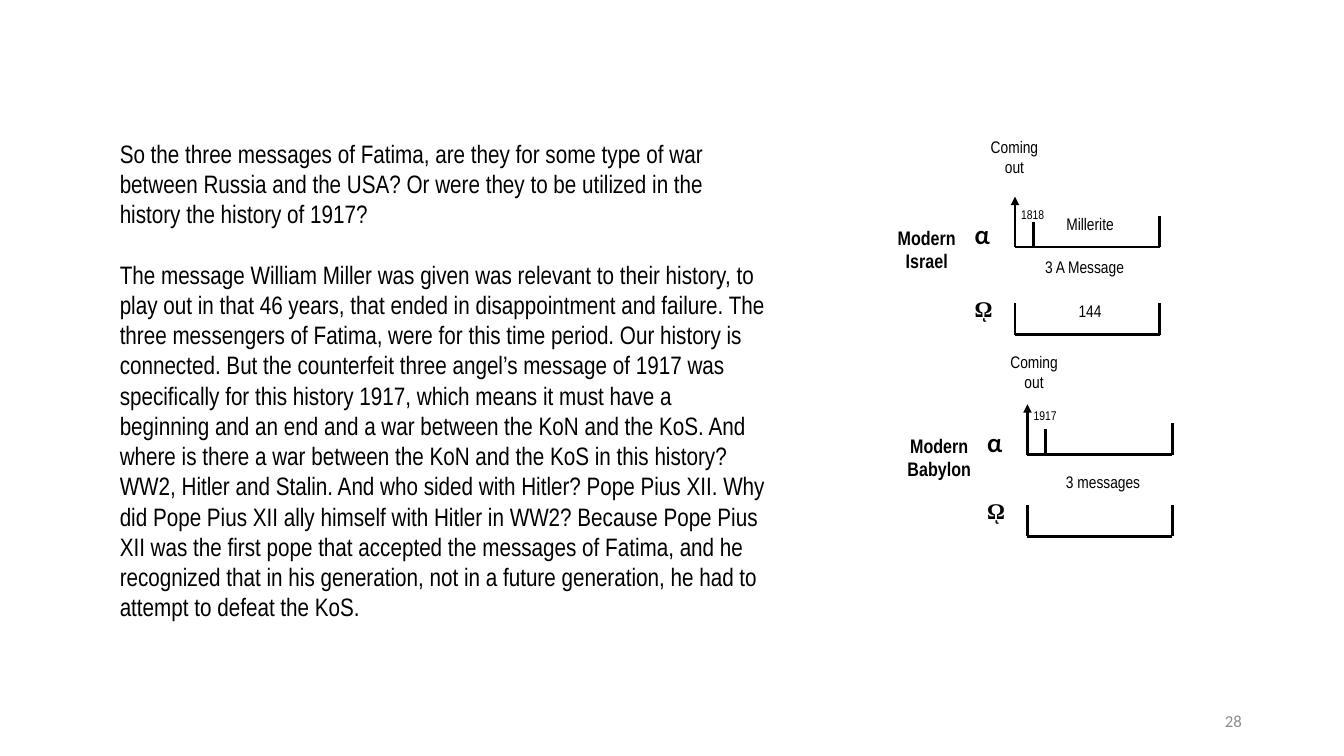
"""Builds a slide with a commentary on the left and two alpha-omega timelines on the right."""
from lxml.etree import SubElement
from pptx import Presentation
from pptx.dml.color import RGBColor
from pptx.enum.shapes import MSO_CONNECTOR
from pptx.enum.text import MSO_ANCHOR, PP_ALIGN
from pptx.oxml.ns import qn
from pptx.util import Pt

BODY = [
    "So the three messages of Fatima, are they for some type of war between Russia and the USA? "
    "Or were they to be utilized in the history the history of 1917?",
    "The message William Miller was given was relevant to their history, to play out in that 46 years, "
    "that ended in disappointment and failure. The three messengers of Fatima, were for this time period. "
    "Our history is connected. But the counterfeit three angel’s message of 1917 was specifically for this "
    "history 1917, which means it must have a beginning and an end and a war between the KoN and the KoS. "
    "And where is there a war between the KoN and the KoS in this history? WW2, Hitler and Stalin. "
    "And who sided with Hitler? Pope Pius XII. Why did Pope Pius XII ally himself with Hitler in WW2? "
    "Because Pope Pius XII was the first pope that accepted the messages of Fatima, and he recognized that "
    "in his generation, not in a future generation, he had to attempt to defeat the KoS.",
]
PAGE = "28"
TIMELINES = [
    {"name": ["Modern", "Israel"], "year": "1818", "message": "3 A Message",
     "spans": ["Millerite", "144"], "x": 725, "alpha": 176.4, "omega": 239,
     "out_at": (-27.4, -81.4), "year_dy": -31.7, "message_at": (0, 4.3)},
    {"name": ["Modern", "Babylon"], "year": "1917", "message": "3 messages",
     "spans": [], "x": 733.9, "alpha": 324.7, "omega": 383,
     "out_at": (-22.3, -76.3), "year_dy": -36, "message_at": (4.3, 9.4)},
]
THEME = {
    "ink": RGBColor(0, 0, 0), "muted": RGBColor(0x8C, 0x8C, 0x8C), "line": 2,
    "main": "Arial Narrow", "number": "Calibri", "alpha": "Lato", "omega": "Times New Roman",
    "body": 18, "name": 14, "label": 12, "year": 9, "alpha_size": 18, "omega_size": 16,
}
SPAN_W, SPAN_H = 103.4, 22.3


def add_text(s, paragraphs, box, size, font=THEME["main"], color=THEME["ink"], bold=False,
             align=PP_ALIGN.CENTER, anchor=MSO_ANCHOR.TOP, inset=(2.9, 2.9), gap=0):
    tf = s.shapes.add_textbox(*map(Pt, box)).text_frame
    tf.word_wrap = True
    tf.vertical_anchor = anchor
    tf.margin_left = tf.margin_right = Pt(inset[0])
    tf.margin_top = tf.margin_bottom = Pt(inset[1])
    tf.text = "\n".join(paragraphs)
    for p in tf.paragraphs:
        p.alignment = align
        p.space_after = Pt(gap)
        for r in p.runs:
            r.font.name, r.font.size, r.font.bold = font, Pt(size), bold
            r.font.color.rgb = color


def add_line(s, x1, y1, x2, y2, arrow=False):
    sp = s.shapes.add_connector(MSO_CONNECTOR.STRAIGHT, Pt(x1), Pt(y1), Pt(x2), Pt(y2))
    sp.line.color.rgb = THEME["ink"]
    sp.line.width = Pt(THEME["line"])
    if arrow:
        SubElement(sp.line._get_or_add_ln(), qn("a:tailEnd"), type="triangle")
    SubElement(sp._element.spPr, qn("a:effectLst"))


def add_span(s, x, y):
    add_line(s, x, y, x + SPAN_W, y)
    for side in (x, x + SPAN_W):
        add_line(s, side, y - SPAN_H, side, y)


def add_timeline(s, t):
    x, y, omega = t["x"], t["alpha"], t["omega"]
    for base in (y, omega):
        add_span(s, x, base)
    for base, label in zip((y, omega), t["spans"]):
        add_text(s, [label], (x + 26.6, base - 27, 54, 22.3), THEME["label"])
    add_line(s, x, y - SPAN_H, x, y - 36, arrow=True)
    add_line(s, x + 13, y - 18, x + 13, y)
    add_text(s, t["name"], (x - 90, y - 18, 54, 50), THEME["name"], bold=True)
    add_text(s, ["α"], (x - 31.7, y - SPAN_H, 22.3, 22.3), THEME["alpha_size"],
             THEME["alpha"], bold=True, align=PP_ALIGN.LEFT)
    add_text(s, ["ῼ"], (x - 31.7, omega - 31, 22.3, 40.3), THEME["omega_size"],
             THEME["omega"], bold=True, align=PP_ALIGN.LEFT)
    dx, dy = t["out_at"]
    add_text(s, ["Coming out"], (x + dx, y + dy, 54, 40.3), THEME["label"])
    add_text(s, [t["year"]], (x, y + t["year_dy"], 25.2, 17.3), THEME["year"])
    dx, dy = t["message_at"]
    add_text(s, [t["message"]], (x + dx, y + dy, 99.4, 22.3), THEME["label"])


def main():
    prs = Presentation()
    prs.slide_width, prs.slide_height = Pt(960), Pt(540)
    s = prs.slides.add_slide(prs.slide_layouts[6])
    add_text(s, BODY, (78.5, 95, 476, 378), THEME["body"], align=PP_ALIGN.LEFT,
             inset=(7.2, 3.6), gap=21.6)
    for t in TIMELINES:
        add_timeline(s, t)
    add_text(s, [PAGE], (678.2, 500.4, 216, 28.8), THEME["label"], THEME["number"],
             THEME["muted"], align=PP_ALIGN.RIGHT, anchor=MSO_ANCHOR.MIDDLE, inset=(7.2, 3.6))
    prs.save("out.pptx")


if __name__ == "__main__":
    main()
